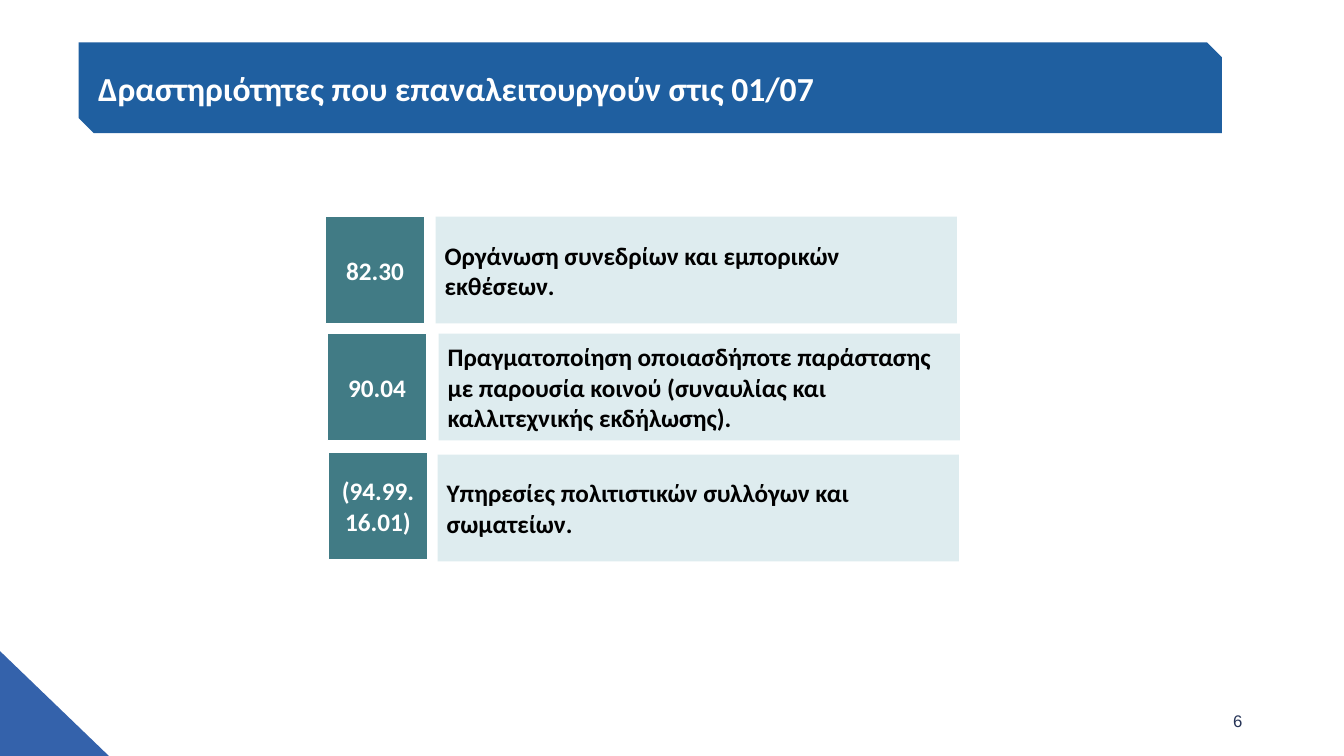
from dataclasses import dataclass

from pptx import Presentation
from pptx import util as u
from pptx.dml import color
from pptx.enum import shapes, text

SHAPE = shapes.MSO_SHAPE
ALIGN = text.PP_ALIGN
WHITE = "FFFFFF"


@dataclass
class Box:
    left: float
    top: float
    width: float
    height: float


@dataclass
class Style:
    size: float
    color: str
    font: str = "Calibri"
    bold: bool = True
    align: ALIGN = ALIGN.LEFT
    inset_x: float = 0.1
    inset_y: float = 0.05


@dataclass
class Activity:
    code: str
    description: str
    code_left: float
    code_top: float
    text_left: float
    text_top: float


TITLE = Style(24, WHITE, inset_x=0.12, inset_y=0.02)
CODE = Style(18, WHITE, align=ALIGN.CENTER, inset_x=0.04, inset_y=0.09)
DESCRIPTION = Style(18, "000000", inset_x=0.09, inset_y=0.04)
PAGE_NUMBER = Style(12, "253356", font="Arial", bold=False, align=ALIGN.RIGHT)

ROW_HEIGHT, CODE_WIDTH, TEXT_WIDTH = 1.06, 0.98, 5.17
ACTIVITIES = [
    Activity("82.30", "Οργάνωση συνεδρίων και εμπορικών εκθέσεων.",
             3.23, 2.15, 4.32, 2.15),
    Activity("90.04", "Πραγματοποίηση οποιασδήποτε παράστασης με παρουσία κοινού "
             "(συναυλίας και καλλιτεχνικής εκδήλωσης).",
             3.25, 3.31, 4.35, 3.31),
    Activity("(94.99. 16.01)", "Υπηρεσίες πολιτιστικών συλλόγων και σωματείων.",
             3.26, 4.49, 4.34, 4.51),
]


def rgb(value: str) -> color.RGBColor:
    return color.RGBColor.from_string(value)


def lengths(box: Box) -> list[u.Length]:
    return [u.Inches(v) for v in (box.left, box.top, box.width, box.height)]


def write(sp, content: str, style: Style) -> None:
    tf = sp.text_frame
    tf.word_wrap = True
    tf.vertical_anchor = text.MSO_ANCHOR.MIDDLE
    tf.margin_left = tf.margin_right = u.Inches(style.inset_x)
    tf.margin_top = tf.margin_bottom = u.Inches(style.inset_y)
    p = tf.paragraphs[0]
    p.alignment = style.align
    r = p.add_run()
    r.text = content
    r.font.name = style.font
    r.font.size = u.Pt(style.size)
    r.font.bold = style.bold
    r.font.color.rgb = rgb(style.color)


def add_block(s, kind: SHAPE, box: Box, fill: str, line: str | None = None):
    sp = s.shapes.add_shape(kind, *lengths(box))
    sp.shadow.inherit = False
    sp.fill.solid()
    sp.fill.fore_color.rgb = rgb(fill)
    if line:
        sp.line.color.rgb = rgb(line)
        sp.line.width = u.Pt(0.75)
    else:
        sp.line.fill.background()
    return sp


def add_activity(s, a: Activity) -> None:
    code_box = Box(a.code_left, a.code_top, CODE_WIDTH, ROW_HEIGHT)
    write(add_block(s, SHAPE.RECTANGLE, code_box, "417B85", WHITE), a.code, CODE)
    text_box = Box(a.text_left, a.text_top, TEXT_WIDTH, ROW_HEIGHT)
    write(add_block(s, SHAPE.RECTANGLE, text_box, "DEECEF"), a.description, DESCRIPTION)


def main() -> None:
    prs = Presentation()
    prs.slide_width, prs.slide_height = u.Inches(13.33), u.Inches(7.5)
    s = prs.slides.add_slide(prs.slide_layouts[6])

    # Corner decoration and page number
    add_block(s, SHAPE.RIGHT_TRIANGLE, Box(0, 6.46, 1.08, 1.04), "3462AB")
    write(s.shapes.add_textbox(*lengths(Box(9.42, 6.95, 3, 0.4))), "6", PAGE_NUMBER)

    # Title banner
    banner = add_block(s, SHAPE.SNIP_2_DIAG_RECTANGLE, Box(0.78, 0.42, 11.34, 0.9), "1F5FA0")
    write(banner, "Δραστηριότητες που επαναλειτουργούν στις 01/07", TITLE)

    # Activity codes with their descriptions
    for activity in ACTIVITIES:
        add_activity(s, activity)

    prs.save("out.pptx")


if __name__ == "__main__":
    main()
